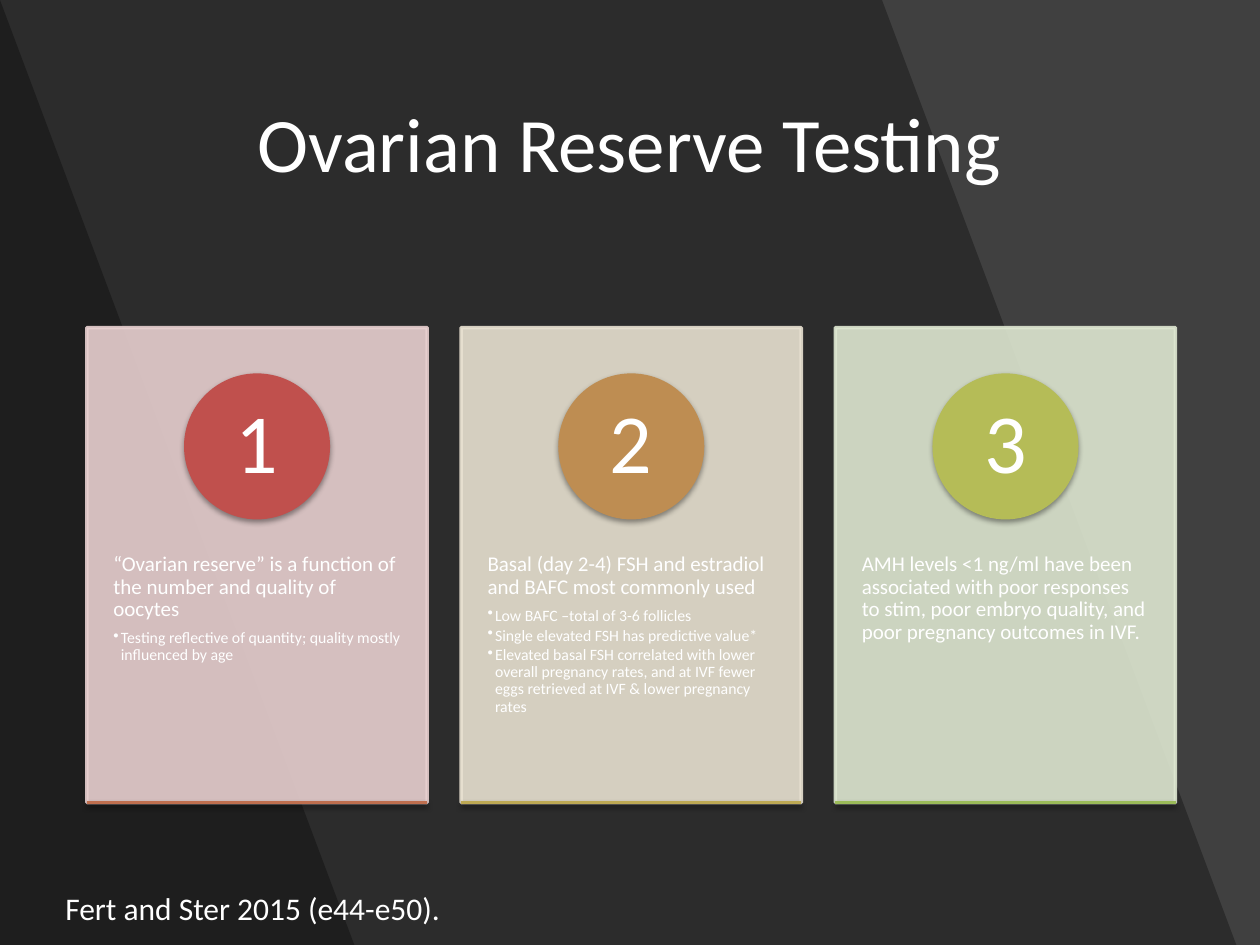
"""Build the Ovarian Reserve Testing slide: three numbered cards on a dark banded background."""
from lxml import etree
from pptx import Presentation, util as u
from pptx.dml.color import RGBColor
from pptx.enum import shapes, text
from pptx.oxml.ns import qn

TITLE = "Ovarian Reserve Testing"
SOURCE = "Fert and Ster 2015 (e44-e50)."
CARDS = [
    {"tint": "E8D0D0", "badge": "C0504D", "base": "BF6F4F",
     "lead": "“Ovarian reserve” is a function of the number and quality of oocytes",
     "points": ["Testing reflective of quantity; quality mostly influenced by age"]},
    {"tint": "E8E1D1", "badge": "BE8D52", "base": "BDA954",
     "lead": "Basal (day 2-4) FSH and estradiol and BAFC most commonly used",
     "points": ["Low BAFC –total of 3-6 follicles",
                "Single elevated FSH has predictive value*",
                "Elevated basal FSH correlated with lower overall pregnancy rates, and at IVF "
                "fewer eggs retrieved at IVF & lower pregnancy rates"]},
    {"tint": "DEE7D1", "badge": "B5BC57", "base": "9BBB59",
     "lead": "AMH levels <1 ng/ml have been associated with poor responses to stim, "
             "poor embryo quality, and poor pregnancy outcomes in IVF.",
     "points": []},
]
WIDTH, HEIGHT = 10, 7.5
BAND_SLANT = 2.61
BAND_TOPS = [7.06, 0.33]
CARD_LEFT, CARD_TOP, CARD_W, CARD_H = 0.69, 2.6, 2.7, 3.77
CARD_PITCH = CARD_W * 1.1
BADGE = CARD_H * 0.3
BADGE_TOP = CARD_TOP + CARD_H * 0.1
BODY_TOP, BODY_H = CARD_TOP + CARD_H * 0.38, CARD_H * 0.6
WHITE, BLACK = "FFFFFF", "000000"


def rgb(value):
    return RGBColor.from_string(value)


def paint(fill, color, opacity=100):
    fill.solid()
    fill.fore_color.rgb = rgb(color)
    if opacity < 100:
        swatch = fill._xPr.find(qn("a:solidFill"))[0]
        etree.SubElement(swatch, qn("a:alpha"), val=str(opacity * 1000))


def outline(line, color, opacity=100):
    line.width = u.Pt(2)
    paint(line.fill, color, opacity)


def drop_shadow(part):
    effects = etree.SubElement(part._element.spPr, qn("a:effectLst"))
    shadow = etree.SubElement(effects, qn("a:outerShdw"), blurRad=str(u.Pt(3.1)),
                              dist=str(u.Pt(1.6)), dir="5400000", rotWithShape="0")
    swatch = etree.SubElement(shadow, qn("a:srgbClr"), val=BLACK)
    etree.SubElement(swatch, qn("a:alpha"), val="38000")


def style(paragraph, size, spacing=None, after=None, align=None):
    paragraph.line_spacing = spacing
    paragraph.space_after = after and u.Pt(after)
    paragraph.alignment = align
    for run in paragraph.runs:
        run.font.size, run.font.name = u.Pt(size), "Calibri"
        run.font.color.rgb = rgb(WHITE)


def bullet(paragraph):
    paragraph.level = 1
    props = paragraph._p.get_or_add_pPr()
    props.set("marL", str(u.Inches(0.06)))
    props.set("indent", str(u.Inches(-0.06)))
    etree.SubElement(props, qn("a:buChar"), char="•")


def add_text(slide, box, words):
    frame = slide.shapes.add_textbox(*map(u.Inches, box)).text_frame
    frame.word_wrap = True
    frame.text = words
    return frame


def add_band(slide, top_right):
    pen = slide.shapes.build_freeform(0, 0, scale=u.Inches(1))
    pen.add_line_segments([(top_right, 0), (top_right + BAND_SLANT, HEIGHT), (0, HEIGHT)])
    band = pen.convert_to_shape()
    band.shadow.inherit = False
    paint(band.fill, BLACK, 30)
    band.line.fill.background()


def add_card(slide, number, card):
    left = CARD_LEFT + (number - 1) * CARD_PITCH
    panel = slide.shapes.add_shape(shapes.MSO_SHAPE.RECTANGLE,
                                   *map(u.Inches, (left, CARD_TOP, CARD_W, CARD_H)))
    panel.shadow.inherit = False
    paint(panel.fill, card["tint"], 90)
    outline(panel.line, card["tint"], 90)

    body = add_text(slide, (left, BODY_TOP, CARD_W, BODY_H), card["lead"])
    body.margin_left = body.margin_right = u.Inches(0.21)
    body.margin_top = body.margin_bottom = u.Inches(0.36)
    style(body.paragraphs[0], 12, 0.9, 5)
    for point in card["points"]:
        item = body.add_paragraph()
        item.text = point
        bullet(item)
        style(item, 9, 0.9, 1.6)

    badge_left = left + (CARD_W - BADGE) / 2
    badge = slide.shapes.add_shape(shapes.MSO_SHAPE.OVAL,
                                   *map(u.Inches, (badge_left, BADGE_TOP, BADGE, BADGE)))
    paint(badge.fill, card["badge"])
    outline(badge.line, card["badge"])
    drop_shadow(badge)
    label = badge.text_frame
    label.text = str(number)
    label.margin_top = label.margin_bottom = u.Inches(0.01)
    label.vertical_anchor = text.MSO_ANCHOR.MIDDLE
    style(label.paragraphs[0], 48, 0.9, align=text.PP_ALIGN.CENTER)

    bottom = CARD_TOP + CARD_H
    base = slide.shapes.add_connector(shapes.MSO_CONNECTOR.STRAIGHT,
                                      *map(u.Inches, (left, bottom, left + CARD_W, bottom)))
    outline(base.line, card["base"])
    drop_shadow(base)


def main():
    deck = Presentation()
    deck.slide_width, deck.slide_height = u.Inches(WIDTH), u.Inches(HEIGHT)
    slide = deck.slides.add_slide(deck.slide_layouts[6])
    paint(slide.background.fill, "404040")
    for top_right in BAND_TOPS:
        add_band(slide, top_right)

    title = add_text(slide, (0.68, 0.4, 8.63, 1.45), TITLE)
    title.vertical_anchor = text.MSO_ANCHOR.MIDDLE
    style(title.paragraphs[0], 44, align=text.PP_ALIGN.CENTER)

    for number, card in enumerate(CARDS, 1):
        add_card(slide, number, card)

    source = add_text(slide, (0.42, 7.01, 5.08, 0.4), SOURCE)
    source.auto_size = text.MSO_AUTO_SIZE.SHAPE_TO_FIT_TEXT
    style(source.paragraphs[0], 18)
    deck.save("out.pptx")


if __name__ == "__main__":
    main()
